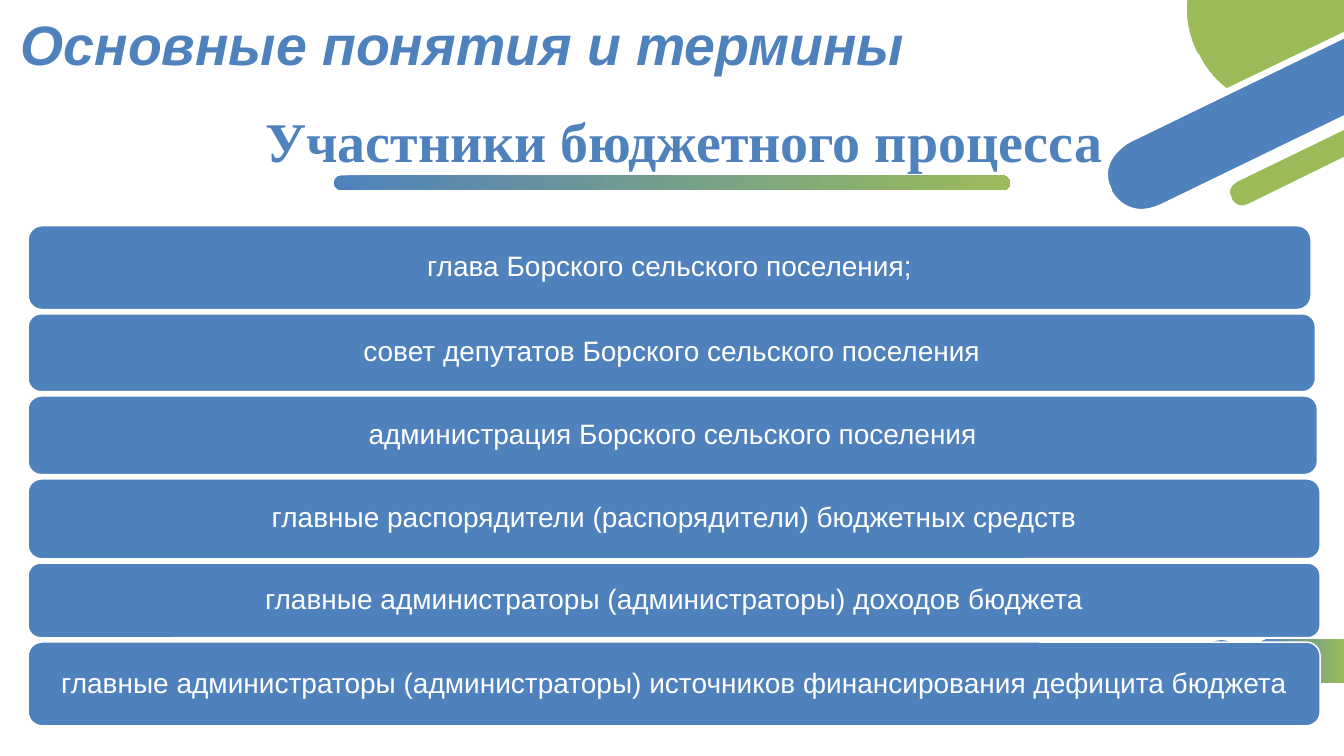
from pptx import Presentation
from pptx.dml.color import RGBColor
from pptx.enum.shapes import MSO_SHAPE
from pptx.enum.text import MSO_ANCHOR, MSO_AUTO_SIZE, PP_ALIGN
from pptx.oxml.ns import qn
from pptx.util import Cm, Pt

ROUNDED, OVAL = MSO_SHAPE.ROUNDED_RECTANGLE, MSO_SHAPE.OVAL
TOP, MIDDLE, BOTTOM = MSO_ANCHOR.TOP, MSO_ANCHOR.MIDDLE, MSO_ANCHOR.BOTTOM
LEFT, CENTER = PP_ALIGN.LEFT, PP_ALIGN.CENTER
NO_AUTOFIT = MSO_AUTO_SIZE.NONE
COLORS = {name: RGBColor.from_string(value) for name, value in {
    "blue": "4F81BD", "green": "9BBB59", "white": "FFFFFF"}.items()}
CURVE_STEPS = 16

prs = Presentation()
prs.slide_width, prs.slide_height = Cm(33.87), Cm(19.05)
slide = prs.slides.add_slide(prs.slide_layouts[1])
shapes = slide.shapes


def draw_outline(start, segments):
    """Close an outline of lines (x, y) and Bezier curves (x1, y1, x2, y2, x, y), in cm."""
    points = [start]
    for segment in segments:
        if len(segment) == 2:
            points.append(segment)
            continue
        (x0, y0), (x1, y1, x2, y2, x3, y3) = points[-1], segment
        for step in range(1, CURVE_STEPS + 1):
            t = step / CURVE_STEPS
            a, b, c, d = (1 - t) ** 3, 3 * t * (1 - t) ** 2, 3 * t * t * (1 - t), t ** 3
            points.append((a * x0 + b * x1 + c * x2 + d * x3,
                           a * y0 + b * y1 + c * y2 + d * y3))
    points = [(Cm(x), Cm(y)) for x, y in points]
    builder = shapes.build_freeform(*points[0])
    builder.add_line_segments(points[1:], close=True)
    outline = builder.convert_to_shape()
    outline.shadow.inherit = False
    return outline


def fade_blue_to_green(shape, blue_until):
    shape.fill.gradient()
    shape.fill.gradient_angle = 0
    blue_stop, green_stop = shape.fill.gradient_stops
    blue_stop.color.rgb, blue_stop.position = COLORS["blue"], blue_until
    green_stop.color.rgb, green_stop.position = COLORS["green"], 1
    shape.line.fill.background()


# Bottom right: dot and tab
dot = shapes.add_shape(OVAL, Cm(30.25), Cm(16.13), Cm(1.07), Cm(1.07))
dot.shadow.inherit = False
dot.fill.solid()
dot.fill.fore_color.rgb = COLORS["blue"]
dot.line.fill.background()
tab = draw_outline((33.87, 17.2), [
    (32.05, 17.2), (32.05, 17.2, 31.52, 17.2, 31.52, 16.64),
    (31.52, 16.64, 31.52, 16.1, 32.05, 16.1), (33.87, 16.1)])
fade_blue_to_green(tab, 0.12)

# Bar under the subtitle
bar = shapes.add_shape(ROUNDED, Cm(8.41), Cm(4.42), Cm(17.04), Cm(0.38))
bar.adjustments[0] = 0.5
bar.shadow.inherit = False
fade_blue_to_green(bar, 0)

# Top right: circle and two slanted bands, edged in white
corner_parts = [
    ("green", (30.18, 1.42), [
        (30.18, 1.42, 30.4, 1.93, 30.91, 2.29), (33.95, 0.83), (33.95, -0.08),
        (29.87, -0.08), (29.82, 0.38, 29.87, 0.84, 30.12, 1.35)]),
    ("blue", (28.47, 3.53), [
        (28.47, 3.53, 27.56, 3.99, 27.97, 4.8), (27.97, 4.83),
        (27.97, 4.83, 28.37, 5.64, 29.31, 5.18), (33.95, 2.93), (33.95, 0.87)]),
    ("green", (31.17, 4.52), [
        (31.17, 4.52, 30.81, 4.7, 30.99, 5), (30.99, 5.03),
        (30.99, 5.03, 31.14, 5.36, 31.5, 5.18), (33.95, 3.98), (33.95, 3.17)]),
]
for color, start, segments in corner_parts:
    part = draw_outline(start, segments)
    part.fill.solid()
    part.fill.fore_color.rgb = COLORS[color]
    part.line.color.rgb = COLORS["white"]
    part.line.width = Pt(3.25)

# Title and subtitle
title, subtitle = slide.placeholders
headings = [
    (title, "Основные понятия и термины", (-0.91, -0.61, 25.15, 2.62),
     BOTTOM, CENTER, "Arial", 39.6, True, 0.7, 0),
    (subtitle, "Участники бюджетного процесса", (6.43, 2.74, 22.63, 1.32),
     TOP, LEFT, "Times New Roman", 40, False, 0.9, 10),
]
for heading, text, box, anchor, align, font, size, italic, spacing, before in headings:
    heading.left, heading.top, heading.width, heading.height = map(Cm, box)
    frame = heading.text_frame
    frame.text = text
    frame.word_wrap = True
    frame.auto_size = NO_AUTOFIT
    frame.vertical_anchor = anchor
    paragraph = frame.paragraphs[0]
    paragraph.alignment = align
    paragraph.line_spacing = spacing
    paragraph.space_before = Pt(before)
    paragraph.font.name = font
    paragraph.font.size = Pt(size)
    paragraph.font.bold = True
    paragraph.font.italic = italic
    paragraph.font.color.rgb = COLORS["blue"]

# The subtitle is a list level without bullet or indent
subtitle_format = subtitle.text_frame.paragraphs[0]._p.get_or_add_pPr()
subtitle_format.set("marL", "0")
subtitle_format.set("indent", "0")
bullet_off = subtitle_format.makeelement(qn("a:buNone"), {})
subtitle_format.find(qn("a:defRPr")).addprevious(bullet_off)

# Participants, stacked with equal gaps
participants = [
    ("глава Борского сельского поселения;", 32.33, 2.11),
    ("совет депутатов Борского сельского поселения", 32.44, 1.96),
    ("администрация Борского сельского поселения", 32.49, 1.98),
    ("главные распорядители (распорядители) бюджетных средств", 32.56, 2.01),
    ("главные администраторы (администраторы) доходов бюджета", 32.56, 1.88),
    ("главные администраторы (администраторы) источников финансирования дефицита бюджета",
     32.56, 2.11),
]
GAP = 0.11
row_top = 5.69
for text, width, height in participants:
    participant = shapes.add_shape(ROUNDED, Cm(0.71), Cm(row_top), Cm(width), Cm(height))
    participant.shadow.inherit = False
    participant.fill.solid()
    participant.fill.fore_color.rgb = COLORS["blue"]
    participant.line.color.rgb = COLORS["white"]
    participant.line.width = Pt(1)
    frame = participant.text_frame
    frame.text = text
    frame.word_wrap = True
    frame.vertical_anchor = MIDDLE
    frame.margin_left = frame.margin_right = Cm(0.2)
    frame.margin_top = frame.margin_bottom = Cm(0.1)
    paragraph = frame.paragraphs[0]
    paragraph.alignment = CENTER
    paragraph.line_spacing = 0.9
    paragraph.font.name = "Arial"
    paragraph.font.size = Pt(20)
    paragraph.font.color.rgb = COLORS["white"]
    row_top += height + GAP

prs.save("out.pptx")
